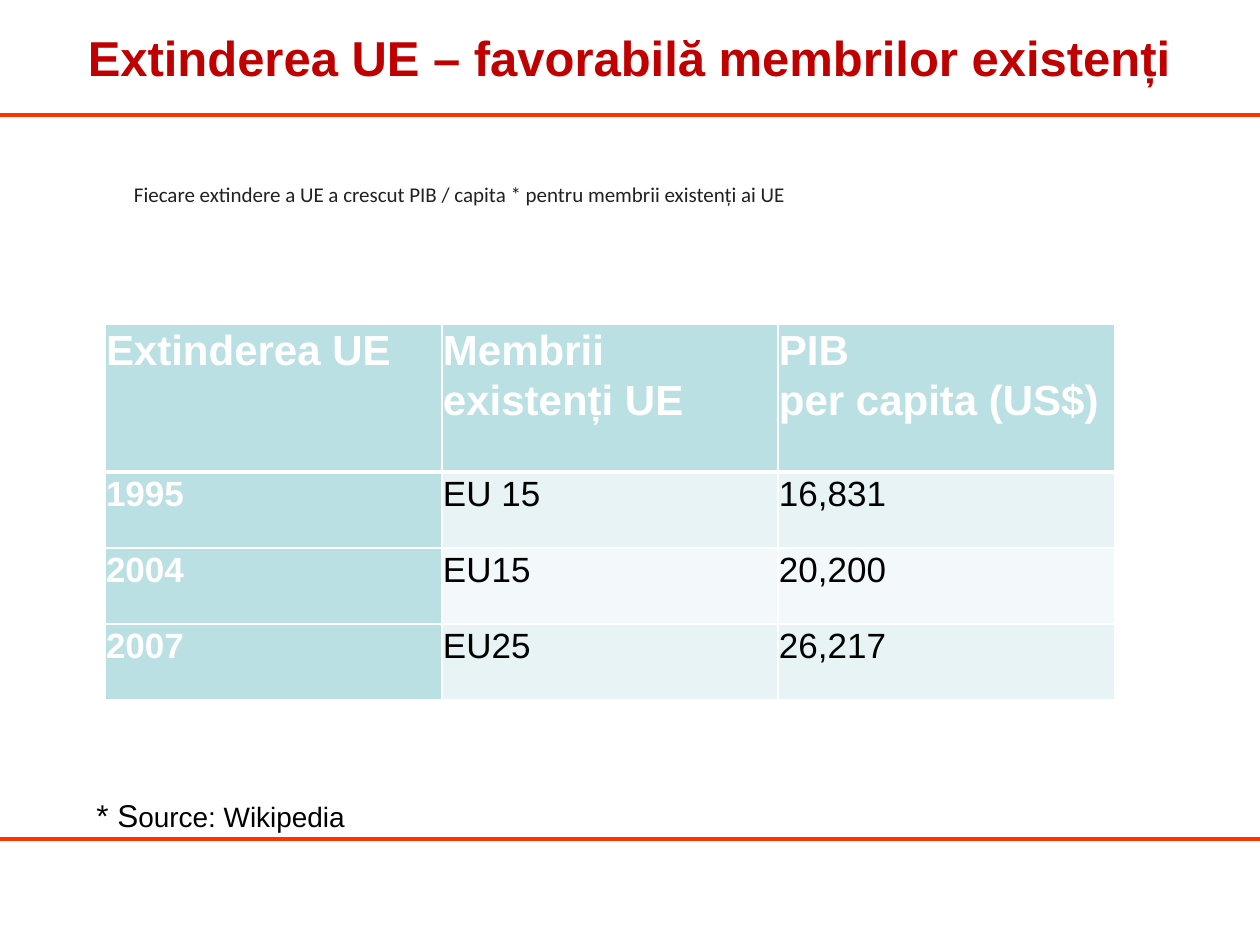
import pptx
import pptx.util
import pptx.dml.color
import pptx.enum.shapes
import pptx.enum.text
import lxml.etree
import pptx.oxml.ns

SCALE = 914400 / 126
ANCHOR = pptx.enum.text.MSO_ANCHOR
qn = pptx.oxml.ns.qn


def px(*sizes):
    return [pptx.util.Emu(round(size * SCALE)) for size in sizes]


def style(item, size, color, face="Arial", bold=False):
    item.font.size = pptx.util.Pt(size)
    item.font.color.rgb = pptx.dml.color.RGBColor.from_string(color)
    item.font.name = face
    item.font.bold = bold


deck = pptx.Presentation()
deck.slide_width, deck.slide_height = px(1260, 945)
slide = deck.slides.add_slide(deck.slide_layouts[6])
shapes = slide.shapes

# Rules above and below the content
for y in (115, 839):
    rule = shapes.add_connector(
        pptx.enum.shapes.MSO_CONNECTOR.STRAIGHT, *px(0, y, 1260, y))
    rule.line.color.rgb = pptx.dml.color.RGBColor.from_string("FF3300")
    rule.line.width = pptx.util.Pt(2.25)
    lxml.etree.SubElement(rule._element.spPr, qn("a:effectLst"))

# Table of enlargements
rows = [
    ("Extinderea UE", "Membrii existenți UE", "PIB\vper capita (US$)"),
    ("1995", "EU 15", "16,831"),
    ("2004", "EU15", "20,200"),
    ("2007", "EU25", "26,217"),
]
table = shapes.add_table(4, 3, *px(105, 324, 1010, 376)).table
for col, wide in zip(table.columns, px(337, 336, 337)):
    col.width = wide
for row, high in zip(table.rows, px(148, 76, 76, 76)):
    row.height = high

for r, texts in enumerate(rows):
    for c, text in enumerate(texts):
        cell = table.cell(r, c)
        cell.margin_left, cell.margin_top = px(1, 1)
        cell.margin_right, cell.margin_bottom = px(1, 1)
        para = cell.text_frame.paragraphs[0]
        para.text = text
        para.line_spacing = 1.06
        head = r == 0 or c == 0
        for run in para.runs:
            style(run, 24 if r == 0 else 20,
                  "FFFFFF" if head else "000000", bold=head)

        # White borders, thicker under the header row
        props = cell._tc.get_or_add_tcPr()
        for side in "LRTB":
            thick = (r, side) in ((0, "B"), (1, "T"))
            edge = lxml.etree.SubElement(
                props, qn("a:ln" + side), w=str(pptx.util.Pt(3 if thick else 1)))
            fill = lxml.etree.SubElement(edge, qn("a:solidFill"))
            lxml.etree.SubElement(fill, qn("a:srgbClr"), val="FFFFFF")

        band = "E7F3F4" if r % 2 else "F3F9FA"
        cell.fill.solid()
        cell.fill.fore_color.rgb = pptx.dml.color.RGBColor.from_string(
            "BBE0E3" if head else band)

# Title
title = shapes.add_textbox(*px(62, 23, 1134, 68)).text_frame
title.word_wrap = True
title.vertical_anchor = ANCHOR.MIDDLE
para = title.paragraphs[0]
para.text = "Extinderea UE – favorabilă membrilor existenți"
para.alignment = pptx.enum.text.PP_ALIGN.CENTER
style(para.runs[0], 28, "C00000", bold=True)

# Source line
note = shapes.add_textbox(*px(84, 790, 625, 50)).text_frame
note.word_wrap = True
for text, size in (("* S", 18), ("ource: Wikipedia", 16)):
    run = note.paragraphs[0].add_run()
    run.text = text
    style(run, size, "000000")

# Claim above the table
claim = shapes.add_shape(
    pptx.enum.shapes.MSO_SHAPE.RECTANGLE, *px(134, 182, 1063, 25))
claim.shadow.inherit = False
claim.fill.solid()
claim.fill.fore_color.rgb = pptx.dml.color.RGBColor.from_string("FFFFFF")
claim.line.fill.background()
frame = claim.text_frame
frame.word_wrap = True
frame.vertical_anchor = ANCHOR.MIDDLE
frame.margin_left = frame.margin_top = 0
frame.margin_right = frame.margin_bottom = 0
para = frame.paragraphs[0]
para.text = ("Fiecare extindere a UE a crescut PIB / capita * "
             "pentru membrii existenți ai UE")
para.alignment = pptx.enum.text.PP_ALIGN.LEFT
style(para.runs[0], 12, "212121", "Calibri")

deck.save("out.pptx")
